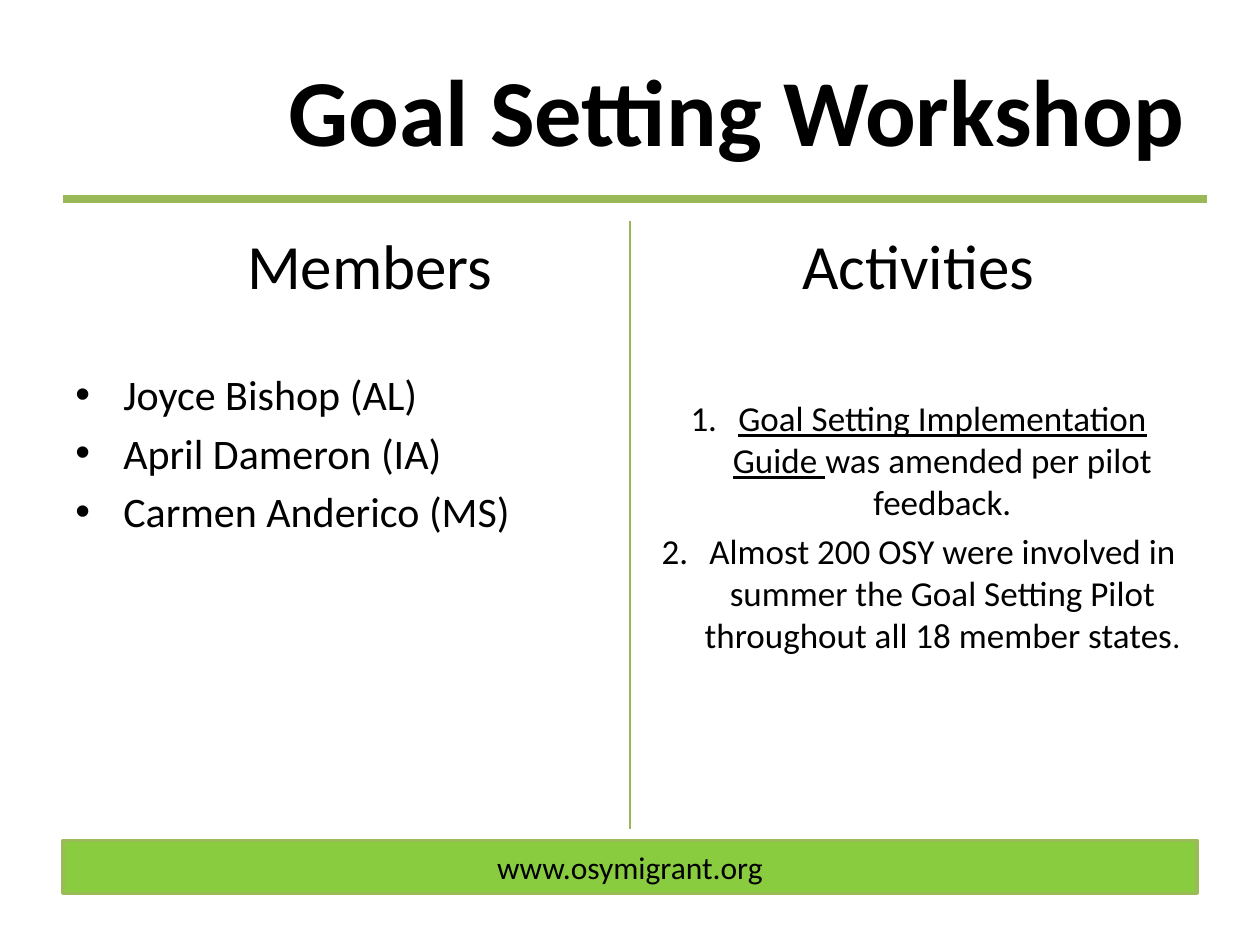
from dataclasses import dataclass
from lxml.etree import SubElement
from pptx import Presentation
from pptx.dml.color import RGBColor
from pptx.enum.shapes import MSO_CONNECTOR, MSO_SHAPE
from pptx.enum.text import MSO_ANCHOR, PP_ALIGN
from pptx.oxml.ns import qn
from pptx.util import Inches, Pt


@dataclass(frozen=True)
class Theme:
    font: str = "Calibri"
    ink: RGBColor = RGBColor(0, 0, 0)
    rule: RGBColor = RGBColor(0x98, 0xB9, 0x55)
    band: RGBColor = RGBColor(0x89, 0xCC, 0x40)
    edge: RGBColor = RGBColor(0x9B, 0xBB, 0x59)
    title: int = 54
    head: int = 36
    names: int = 24
    steps: int = 20
    small: int = 18


THEME = Theme()
HANG = 0.38


def style(para, size, align, bold=None):
    para.alignment = align
    font = para.font
    font.name, font.size, font.bold = THEME.font, Pt(size), bold
    font.color.rgb = THEME.ink


def indent(para, left, first=0):
    props = para._p.get_or_add_pPr()
    props.set("marL", str(Inches(left)))
    props.set("indent", str(Inches(first)))
    return props


def add_rule(slide, start, end, width):
    line = slide.shapes.add_connector(
        MSO_CONNECTOR.STRAIGHT, *map(Inches, start + end))
    line.line.color.rgb = THEME.rule
    line.line.width = Pt(width)
    SubElement(line._element.spPr, qn("a:effectLst"))


def add_title(slide, box, text):
    title = slide.shapes.title
    title.left, title.top, title.width, title.height = map(Inches, box)
    frame = title.text_frame
    frame.vertical_anchor = MSO_ANCHOR.MIDDLE
    frame.text = text
    style(frame.paragraphs[0], THEME.title, PP_ALIGN.RIGHT, True)


def add_column(slide, box, head, shift, items, size, align, mark, gaps):
    """Heading over a list; each item is a list of (text, format) runs."""
    frame = slide.shapes.add_textbox(*map(Inches, box)).text_frame
    frame.word_wrap = True
    para = frame.paragraphs[0]
    para.text = head
    indent(para, shift)
    style(para, THEME.head, PP_ALIGN.CENTER)

    for i, runs in enumerate(items):
        para = frame.add_paragraph()
        para.space_before = Pt(gaps[min(i, 1)])
        props = indent(para, HANG, -HANG)
        SubElement(props, qn("a:buFont"), typeface="Arial" if mark[0] == "buChar" else "+mj-lt")
        SubElement(props, qn("a:" + mark[0]), **mark[1])
        style(para, size, align)
        for text, look in runs:
            run = para.add_run()
            run.text = text
            for key, value in look.items():
                setattr(run.font, key, value)


def add_footer(slide, box, text):
    bar = slide.shapes.add_shape(MSO_SHAPE.RECTANGLE, *map(Inches, box))
    bar.shadow.inherit = False
    bar.fill.solid()
    bar.fill.fore_color.rgb = THEME.band
    bar.line.color.rgb = THEME.edge
    bar.line.width = Pt(2)
    bar.text_frame.text = text
    style(bar.text_frame.paragraphs[0], THEME.small, PP_ALIGN.CENTER)


def main():
    deck = Presentation()
    deck.slide_width, deck.slide_height = Inches(10), Inches(7.5)
    slide = deck.slides.add_slide(deck.slide_layouts[5])
    left, top, wide, tall, col = 0.5, 1.75, 9, 4.83, 4.42

    # Title and rules
    add_title(slide, (left, 0.3, wide, 1.12), "Goal Setting Workshop")
    add_rule(slide, (left, 1.58), (9.58, 1.58), 4.5)
    add_rule(slide, (5, top), (5, top + tall), 1.5)

    # Members
    names = ["Joyce Bishop (AL)", "April Dameron (IA)", "Carmen Anderico (MS)"]
    add_column(slide, (left, top, col, tall), "Members", 0.45,
               [[(name, {})] for name in names], THEME.names,
               PP_ALIGN.LEFT, ("buChar", {"char": "•"}), (38, 4.5))

    # Activities
    steps = [
        [("Goal Setting Implementation Guide ", {"underline": True}),
         ("was amended per pilot feedback.", {})],
        [("Almost 200 OSY were involved in summer the Goal Setting Pilot "
          "throughout all 18 member states", {}),
         (".", {"size": Pt(THEME.small)})],
    ]
    add_column(slide, (left + wide - col, top, col, tall), "Activities", 0,
               steps, THEME.steps, PP_ALIGN.CENTER,
               ("buAutoNum", {"type": "arabicPeriod"}), (54, 4))

    # Footer
    add_footer(slide, (left, 6.67, wide, 0.42), "www.osymigrant.org")
    deck.save("out.pptx")


if __name__ == "__main__":
    main()
